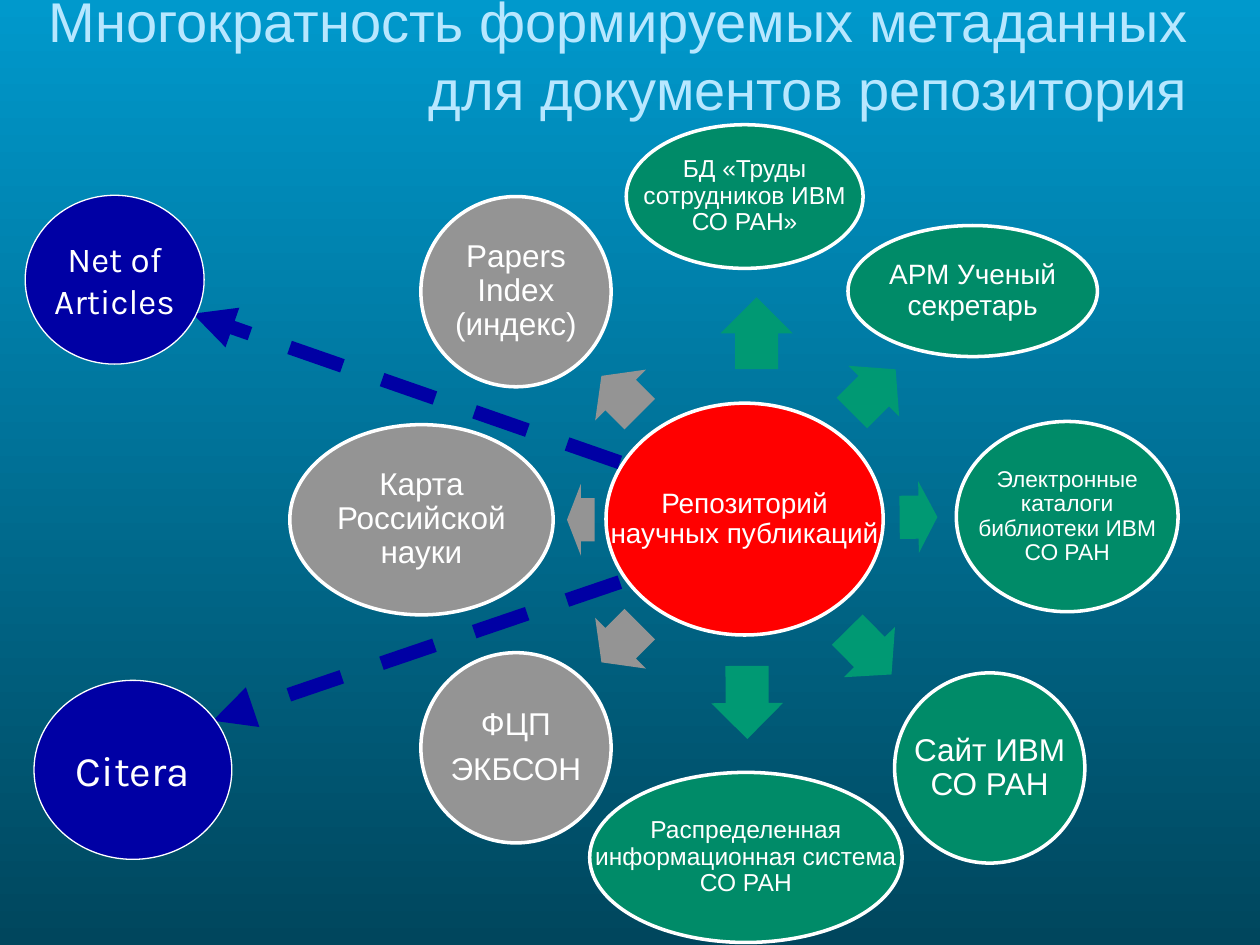
from lxml import etree
from pptx import Presentation
from pptx.dml.color import RGBColor
from pptx.enum.dml import MSO_LINE
from pptx.enum.shapes import MSO_CONNECTOR, MSO_SHAPE
from pptx.enum.text import MSO_ANCHOR, PP_ALIGN
from pptx.oxml.ns import qn
from pptx.util import Inches, Pt

ELLIPSE, ARROW = MSO_SHAPE.OVAL, MSO_SHAPE.RIGHT_ARROW
STRAIGHT, DASH = MSO_CONNECTOR.STRAIGHT, MSO_LINE.DASH
CENTER, RIGHT, MIDDLE = PP_ALIGN.CENTER, PP_ALIGN.RIGHT, MSO_ANCHOR.MIDDLE

WIDTH, HEIGHT = 10, 7.5
COLUMNS = 100
CELL = WIDTH / COLUMNS
ARROW_BREADTH = 5.7

COLORS = {
    "sky": "0099CC", "deep": "00465D", "title": "B7E7FF", "white": "FFFFFF",
    "hub": "FF0000", "internal": "008B68", "internal arrow": "009973",
    "national": "949494", "world": "0000A4",
}

TITLE = "Многократность формируемых метаданных для документов репозитория"

NODES = [
    (59.1, 41.2, 22, 18.4, "hub", 16, [["Репозиторий", "научных публикаций"]]),
    (59.1, 15.6, 18.8, 11.4, "internal", 14, [["БД «Труды", "сотрудников ИВМ", "СО РАН»"]]),
    (77.2, 23.1, 19.8, 10.4, "internal", 16, [["АРМ Ученый", "секретарь"]]),
    (84.7, 41, 17.6, 15.1, "internal", 13,
     [["Электронные", "каталоги", "библиотеки ИВМ", "СО РАН"]]),
    (78.55, 60.95, 15.1, 15.1, "internal", 18, [["Сайт ИВМ", "СО РАН"]]),
    (59.2, 68.05, 24.8, 13.5, "internal", 14,
     [["Распределенная", "информационная система", "СО РАН"]]),
    (40.95, 59.35, 15.1, 15.1, "national", 18, [["ФЦП"], ["ЭКБСОН"]]),
    (33.45, 41.25, 20.9, 15.1, "national", 18, [["Карта", "Российской", "науки"]]),
    (40.95, 23.15, 15.1, 15.1, "national", 18, [["Papers", "Index", "(индекс)"]]),
]

WORLD_NODES = [
    (10.55, 61.1, 15.7, 14.2, "world", 24, [["Citera"]]),
    (9.1, 22.2, 14.2, 13.4, "world", 20, [["Net of"], ["Articles"]]),
]

ARROWS = [
    (60.05, 26.45, 5.7, 270, "internal arrow"),
    (69.35, 31.05, 4.9, 315, "internal arrow"),
    (72.9, 41.05, 3, 359.5, "internal arrow"),
    (69, 51.75, 5, 45.4, "internal arrow"),
    (59.3, 55.75, 5.8, 89.7, "internal arrow"),
    (49.25, 51.05, 4.3, 135, "national"),
    (46.1, 41.25, 2.2, 180, "national"),
    (49.25, 31.35, 4.3, 225, "national"),
]

LINKS = [
    ((49.2, 36.7), (15.3, 24.9)),
    ((49.2, 46.2), (16.9, 57.2)),
]


def cells(count):
    return Inches(count * CELL)


def color(name):
    return RGBColor.from_string(COLORS[name])


def add_span(para, text, size, font, tint):
    span = para.add_run()
    span.text = text
    span.font.size = Pt(size)
    span.font.name = font
    span.font.color.rgb = color(tint)


def add_centred(page, kind, column, row, columns, rows, fill):
    shape = page.shapes.add_shape(
        kind, cells(column - columns / 2), cells(row - rows / 2),
        cells(columns), cells(rows))
    shape.shadow.inherit = False
    shape.fill.solid()
    shape.fill.fore_color.rgb = color(fill)
    shape.line.fill.background()
    return shape


def add_node(page, node, font, border, spacing, gap):
    column, row, columns, rows, fill, size, paragraphs = node
    shape = add_centred(page, ELLIPSE, column, row, columns, rows, fill)
    shape.line.color.rgb = color("white")
    shape.line.width = Pt(border)
    frame = shape.text_frame
    frame.word_wrap = False
    frame.vertical_anchor = MIDDLE
    frame.margin_left = frame.margin_right = Inches(0.02)
    frame.margin_top = frame.margin_bottom = Inches(0.02)
    for index, lines in enumerate(paragraphs):
        para = frame.add_paragraph() if index else frame.paragraphs[0]
        para.alignment = CENTER
        para.line_spacing = spacing
        para.space_after = Pt(size * gap)
        for number, line in enumerate(lines):
            if number:
                para.add_line_break()
            add_span(para, line, size, font, "white")


def add_arrow(page, column, row, length, angle, fill):
    arrow = add_centred(page, ARROW, column, row, length, ARROW_BREADTH, fill)
    arrow.adjustments[0] = 0.6
    arrow.adjustments[1] = 0.5
    arrow.rotation = angle


def add_link(page, start, end):
    link = page.shapes.add_connector(STRAIGHT, *map(cells, start + end))
    link.line.color.rgb = color("world")
    link.line.width = Pt(8)
    link.line.dash_style = DASH
    properties = link._element.spPr
    etree.SubElement(properties.find(qn("a:ln")), qn("a:tailEnd"), type="triangle")
    etree.SubElement(properties, qn("a:effectLst"))


def add_title(page):
    box = page.shapes.add_textbox(cells(2.3), 0, cells(93), cells(8.6))
    frame = box.text_frame
    frame.word_wrap = True
    frame.vertical_anchor = MIDDLE
    para = frame.paragraphs[0]
    para.alignment = RIGHT
    add_span(para, TITLE, 32, "Arial", "title")


def paint_background(page):
    fill = page.background.fill
    fill.gradient()
    fill.gradient_angle = 270
    for stop, name, position in zip(fill.gradient_stops, ("sky", "deep"), (0, 1)):
        stop.color.rgb = color(name)
        stop.position = position


def main():
    deck = Presentation()
    deck.slide_width, deck.slide_height = Inches(WIDTH), Inches(HEIGHT)
    page = deck.slides.add_slide(deck.slide_layouts[6])
    paint_background(page)
    add_title(page)
    for arrow in ARROWS:
        add_arrow(page, *arrow)
    for node in NODES:
        add_node(page, node, "Arial", 2, 0.9, 0.35)
    for start, end in LINKS:
        add_link(page, start, end)
    for node in WORLD_NODES:
        add_node(page, node, "Karla", 0.75, 1, 0)
    deck.save("out.pptx")


if __name__ == "__main__":
    main()
